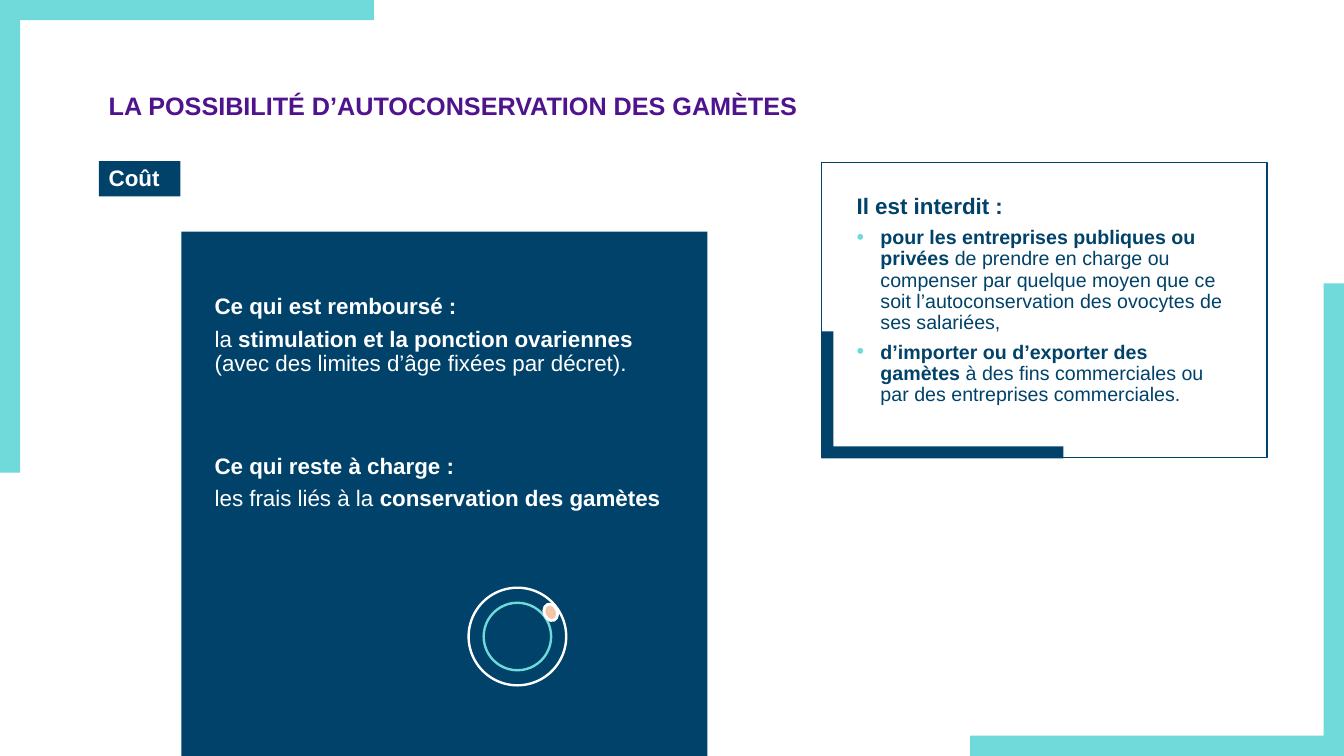
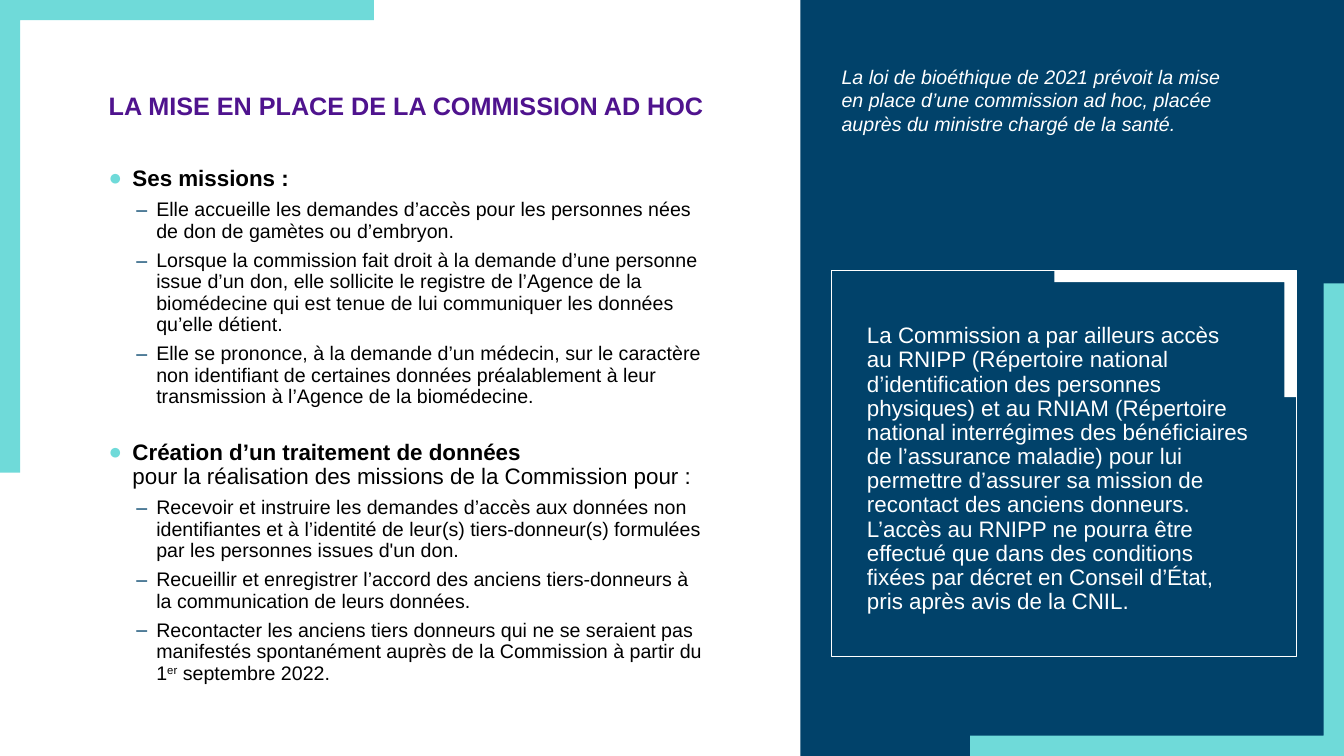
"""Build two slides on gamete storage and the ad hoc commission."""
from dataclasses import dataclass
from math import copysign

from lxml.etree import SubElement
from pptx import Presentation
from pptx.dml.color import RGBColor as RGB
from pptx.enum.shapes import MSO_SHAPE as Kind
from pptx.enum.text import MSO_ANCHOR as Anchor
from pptx.enum.text import MSO_AUTO_SIZE as Fit
from pptx.enum.text import PP_ALIGN as Align
from pptx.oxml.ns import qn
from pptx.util import Cm, Pt


@dataclass(frozen=True)
class Theme:
    font: str = "Arial"
    navy: str = "01426A"
    aqua: str = "6FDAD9"
    plum: str = "4F138E"
    peach: str = "F2C6A6"
    white: str = "FFFFFF"
    black: str = "000000"
    title: int = 18
    large: int = 16
    small: int = 14


T = Theme()
WIDE, HIGH = 33.87, 19.05
STYLES = {
    "title": dict(size=T.title),
    "plain": dict(size=T.large, before=6),
    "quote": dict(size=T.small, space=1.0, italic=True),
    "point": dict(size=T.small, before=6, mark="•", tint=T.aqua, scale=110, left=0.6, hang=0.6),
    "head": dict(size=T.large, before=12, mark="●", tint=T.aqua, left=0.6, hang=0.6),
    "next": dict(size=T.large, before=24, mark="●", tint=T.aqua, left=0.6, hang=0.6),
    "dash": dict(size=T.small, before=6, mark="‒", tint=T.navy, left=1.2, hang=0.5),
}


class Deck:
    def __init__(self):
        self.show = Presentation()
        self.show.slide_width, self.show.slide_height = Cm(WIDE), Cm(HIGH)

    def start(self, title, panel):
        self.slide = self.show.slides.add_slide(self.show.slide_layouts[5])
        self.shapes = self.slide.shapes
        head = self.shapes.title
        place = dict(left=2.49, top=2.24, width=28.3, height=0.94)
        for name, value in place.items():
            setattr(head, name, Cm(value))
        self.put(head, [("title", f"*{title}*")], T.plum, Anchor.BOTTOM)
        self.box(*panel, fill=T.navy)
        self.ell(0, 0, 9.42, 11.91, 0.51, T.aqua)
        self.ell(WIDE, HIGH, -9.42, -11.91, 0.51, T.aqua)

    def paint(self, shape, fill, line=None, width=1):
        shape.shadow.inherit = False
        if fill:
            shape.fill.solid()
            shape.fill.fore_color.rgb = RGB.from_string(fill)
        else:
            shape.fill.background()
        if line:
            shape.line.color.rgb = RGB.from_string(line)
            shape.line.width = Pt(width)
        else:
            shape.line.fill.background()
        return shape

    def box(self, x, y, w, h, fill=None, line=None, width=1, kind=Kind.RECTANGLE):
        shape = self.shapes.add_shape(kind, Cm(x), Cm(y), Cm(w), Cm(h))
        return self.paint(shape, fill, line, width)

    def oval(self, x, y, w, h, line, width, fill=None):
        return self.box(x - w / 2, y - h / 2, w, h, fill, line, width, Kind.OVAL)

    def ell(self, x, y, w, h, thick, fill):
        dx, dy = copysign(thick, w), copysign(thick, h)
        spots = [(x + w, y), (x + w, y + dy), (x + dx, y + dy), (x + dx, y + h), (x, y + h)]
        trace = self.shapes.build_freeform(Cm(x), Cm(y))
        trace.add_line_segments([(Cm(a), Cm(b)) for a, b in spots])
        return self.paint(trace.convert_to_shape(), fill)

    def text(self, x, y, w, h, lines, color):
        self.put(self.shapes.add_textbox(Cm(x), Cm(y), Cm(w), Cm(h)), lines, color)

    def card(self, x, y, w, h, lines, color, top, base):
        shape = self.box(x, y, w, h, line=color)
        self.put(shape, lines, color, Anchor.MIDDLE, (0.89, top, 1.09, base))

    def put(self, shape, lines, color, anchor=Anchor.TOP, pads=(0.25, 0.13, 0.25, 0.13)):
        frame = shape.text_frame
        sides = ("margin_left", "margin_top", "margin_right", "margin_bottom")
        form = dict(zip(sides, map(Cm, pads)))
        form.update(word_wrap=True, auto_size=Fit.NONE, vertical_anchor=anchor)
        for name, value in form.items():
            setattr(frame, name, value)
        for rank, (style, words) in enumerate(lines):
            para = frame.add_paragraph() if rank else frame.paragraphs[0]
            look = STYLES[style]
            form = dict(alignment=Align.LEFT, line_spacing=look.get("space", 0.9),
                        space_before=Pt(look.get("before", 0)))
            for name, value in form.items():
                setattr(para, name, value)
            if "mark" in look:
                self.mark(para, look)
            self.fill(para, words, look, color)

    def mark(self, para, look):
        props = para._p.get_or_add_pPr()
        props.set("marL", str(Cm(look["left"])))
        props.set("indent", str(-Cm(look["hang"])))
        SubElement(SubElement(props, qn("a:buClr")), qn("a:srgbClr"), val=look["tint"])
        SubElement(props, qn("a:buSzPct"), val=str(look.get("scale", 100) * 1000))
        SubElement(props, qn("a:buFont"), typeface=T.font)
        SubElement(props, qn("a:buChar"), char=look["mark"])

    def fill(self, para, words, look, color):
        for step, part in enumerate(words.split("*")):
            for raised, piece in enumerate(part.split("^")):
                for row, line in enumerate(piece.split("\n")):
                    if row:
                        para.add_line_break()
                        SubElement(para._p[-1], qn("a:rPr"), sz=str(look["size"] * 100))
                    if line:
                        run = para.add_run()
                        run.text = line
                        form = dict(name=T.font, size=Pt(look["size"]), bold=step % 2 == 1,
                                    italic=look.get("italic", False))
                        for name, value in form.items():
                            setattr(run.font, name, value)
                        run.font.color.rgb = RGB.from_string(color)
                        if raised % 2:
                            run.font._element.set("baseline", "30000")


def cost(deck):
    deck.start("LA POSSIBILITÉ D’AUTOCONSERVATION DES GAMÈTES", (4.57, 5.84, 13.26, 13.21))
    tag = deck.box(2.49, 4.06, 2.06, 0.89, fill=T.navy)
    deck.put(tag, [("plain", "*Coût*")], T.white, Anchor.MIDDLE)
    deck.card(20.7, 4.09, 11.23, 7.44, [
        ("plain", "*Il est interdit :*"),
        ("point", "*pour les entreprises publiques ou privées *de prendre en charge ou compenser "
                  "par quelque moyen que ce soit l’autoconservation des ovocytes de ses salariées,"),
        ("point", "*d’importer ou d’exporter des gamètes *à des fins commerciales ou "
                  "par des entreprises commerciales."),
    ], T.navy, 0.13, 0.61)
    deck.ell(20.7, 11.55, 6.1, -3.2, 0.3, T.navy)
    deck.oval(13.04, 16.04, 1.7, 1.7, T.aqua, 1.71)
    deck.oval(13.04, 16.04, 2.46, 2.46, T.white, 1.71)
    deck.oval(13.88, 15.43, 0.33, 0.43, T.white, 2, T.peach).rotation = 336.7
    deck.text(5.16, 7.32, 11.56, 2.31, [
        ("plain", "*Ce qui est remboursé :*"),
        ("plain", "la *stimulation et la ponction ovariennes *"
                  "(avec des limites d’âge fixées par décret)."),
    ], T.white)
    deck.text(5.16, 11.33, 11.96, 1.7, [
        ("plain", "*Ce qui reste à charge :*"),
        ("plain", "les frais liés à la *conservation des gamètes*"),
    ], T.white)


def board(deck):
    deck.start("LA MISE EN PLACE DE LA COMMISSION AD HOC", (20.17, 0, 13.7, HIGH))
    deck.text(2.49, 4.09, 15.85, 13.39, [
        ("head", "*Ses missions :*"),
        ("dash", "Elle accueille les demandes d’accès pour les personnes nées "
                 "de don de gamètes ou d’embryon."),
        ("dash", "Lorsque la commission fait droit à la demande d’une personne issue d’un don, "
                 "elle sollicite le registre de l’Agence de la biomédecine qui est tenue "
                 "de lui communiquer les données qu’elle détient."),
        ("dash", "Elle se prononce, à la demande d’un médecin, sur le caractère non identifiant "
                 "de certaines données préalablement à leur transmission "
                 "à l’Agence de la biomédecine."),
        ("next", "*Création d’un traitement de données\n*"
                 "pour la réalisation des missions de la Commission pour :"),
        ("dash", "Recevoir et instruire les demandes d’accès aux données non identifiantes "
                 "et à l’identité de leur(s) tiers-donneur(s) formulées "
                 "par les personnes issues d'un don."),
        ("dash", "Recueillir et enregistrer l’accord des anciens tiers-donneurs à\n"
                 "la communication de leurs données."),
        ("dash", "Recontacter les anciens tiers donneurs qui ne se seraient pas manifestés "
                 "spontanément auprès de la Commission à partir du 1^er^ septembre 2022."),
    ], T.black)
    deck.text(20.96, 1.5, 10.54, 2.06, [
        ("quote", "La loi de bioéthique de 2021 prévoit la mise en place d’une commission ad hoc, "
                  "placée auprès du ministre chargé de la santé."),
    ], T.white)
    deck.card(20.96, 6.81, 11.71, 9.73, [
        ("plain", "La Commission a par ailleurs accès\nau RNIPP (Répertoire national "
                  "d’identification des personnes physiques) et au RNIAM (Répertoire national "
                  "interrégimes des bénéficiaires de l’assurance maladie) pour lui permettre "
                  "d’assurer sa mission de recontact des anciens donneurs. L’accès au RNIPP "
                  "ne pourra être effectué que dans des conditions fixées par décret "
                  "en Conseil d’État, pris après avis de la CNIL."),
    ], T.white, 0.61, 0.3)
    deck.ell(32.67, 6.81, -6.1, 3.2, 0.3, T.white)


def main():
    deck = Deck()
    cost(deck)
    board(deck)
    deck.show.save("out.pptx")


if __name__ == "__main__":
    main()
